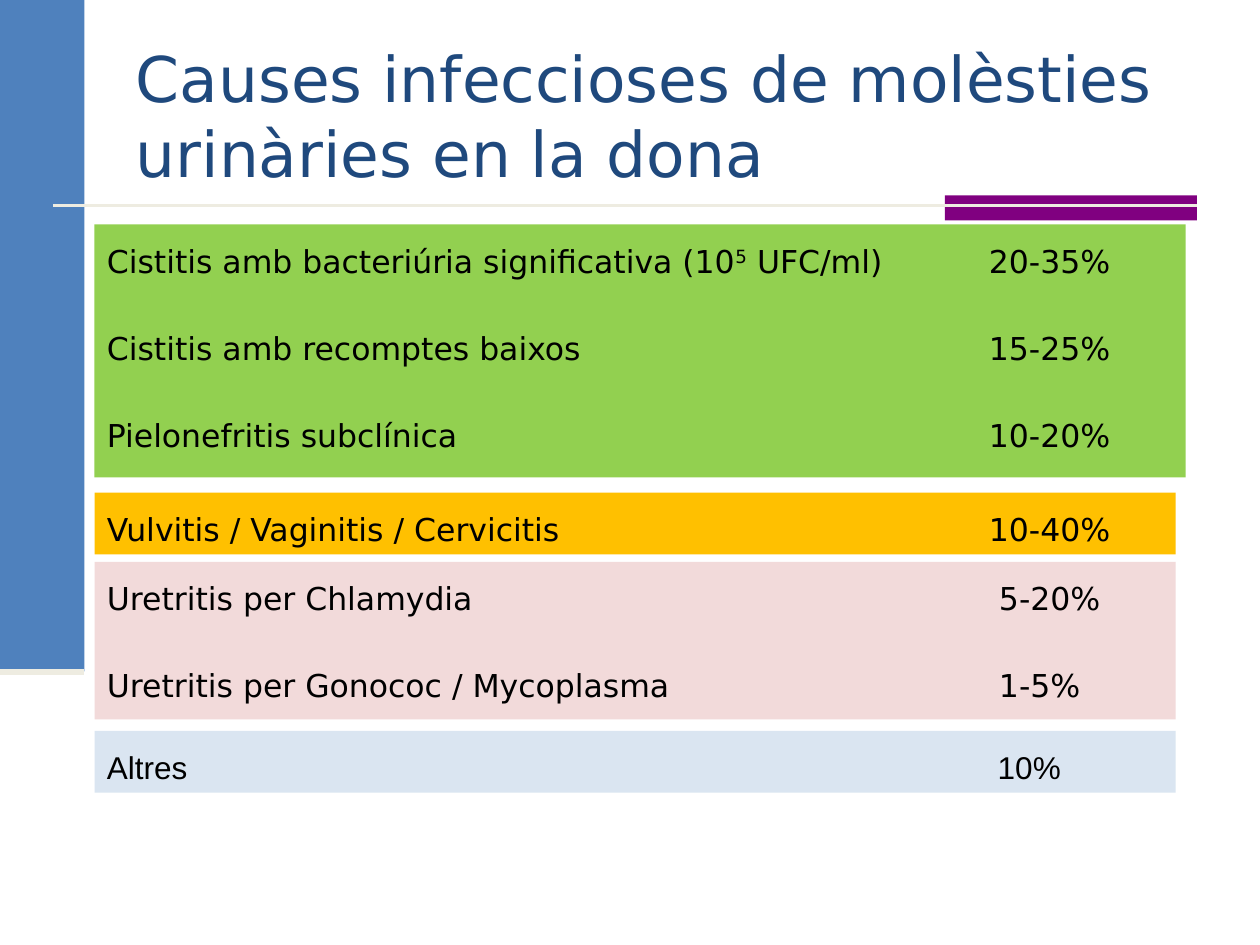
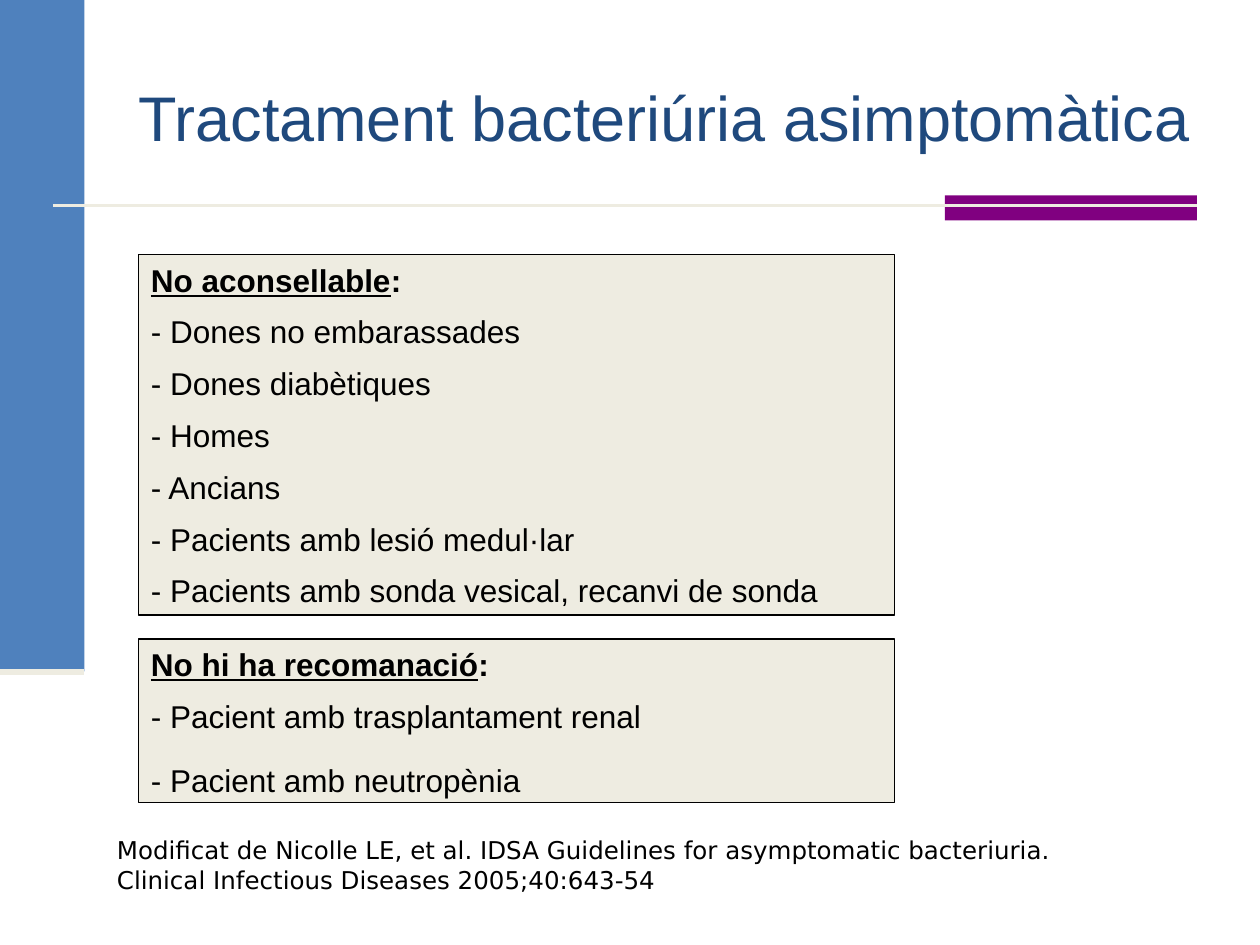
from lxml import etree
from pptx import Presentation
from pptx.dml.color import RGBColor
from pptx.enum.shapes import MSO_CONNECTOR, MSO_SHAPE
from pptx.enum.text import MSO_ANCHOR, PP_ALIGN
from pptx.oxml.ns import qn
from pptx.util import Inches, Pt

COLORS = {
    "band": "4F81BD", "accent": "800080", "rule": "EEECE1", "title": "1F497D",
    "text": "000000", "cystitis": "92D050", "vulvitis": "FFC000",
    "urethritis": "F2DADA", "others": "DAE5F1", "panel": "EEECE1",
}
SANS, ARIAL = "DejaVu Sans", "Arial"
BODY_SIZE = 18


def rgb(name):
    return RGBColor.from_string(COLORS[name])


def add_rect(slide, box, fill, outline=None):
    rect = slide.shapes.add_shape(MSO_SHAPE.RECTANGLE, *map(Inches, box))
    rect.shadow.inherit = False
    rect.fill.solid()
    rect.fill.fore_color.rgb = rgb(fill)
    if outline:
        rect.line.color.rgb = rgb(outline)
        rect.line.width = Pt(1)
    else:
        rect.line.fill.background()
    return rect


def add_rule(slide, start, end, width):
    rule = slide.shapes.add_connector(MSO_CONNECTOR.STRAIGHT, *map(Inches, start + end))
    rule.line.color.rgb = rgb("rule")
    rule.line.width = Pt(width)
    etree.SubElement(rule._element.spPr, qn("a:effectLst"))


def prepare_frame(shape, anchor=MSO_ANCHOR.TOP):
    frame = shape.text_frame
    frame.word_wrap = True
    frame.vertical_anchor = anchor
    return frame


def next_paragraph(frame, index):
    paragraph = frame.paragraphs[0] if index == 0 else frame.add_paragraph()
    paragraph.alignment = PP_ALIGN.LEFT
    return paragraph


def add_run(paragraph, text, font=ARIAL, size=BODY_SIZE, color="text", bold=False, underline=False):
    run = paragraph.add_run()
    run.text = text
    run.font.name, run.font.size = font, Pt(size)
    run.font.color.rgb = rgb(color)
    run.font.bold, run.font.underline = bold, underline
    return run


def add_tab_stop(paragraph, position):
    tabs = etree.SubElement(paragraph._p.get_or_add_pPr(), qn("a:tabLst"))
    etree.SubElement(tabs, qn("a:tab"), pos=str(Inches(position)), algn="l")


def add_text(slide, box, text, anchor=MSO_ANCHOR.TOP, **style):
    frame = prepare_frame(slide.shapes.add_textbox(*map(Inches, box)), anchor)
    add_run(next_paragraph(frame, 0), text, **style)


def add_base_slide(prs, title, title_box, font, anchor):
    """Add a slide with the side band, the title rule and the title."""
    slide = prs.slides.add_slide(prs.slide_layouts[6])
    add_rect(slide, (0, 0, 0.67, 5.33), "band")
    add_rect(slide, (7.5, 1.55, 2, 0.2), "accent")
    add_rule(slide, (0.42, 1.63), (9.5, 1.63), 1.5)
    add_rule(slide, (0, 5.33), (0.67, 5.33), 3.5)
    add_text(slide, title_box, title, anchor, font=font, size=36, color="title")
    return slide


def add_cause_group(slide, box, fill, causes, share_tab, font=SANS):
    """Add a coloured box with one cause and its share per line."""
    frame = prepare_frame(add_rect(slide, box, fill))
    for index, (cause, share) in enumerate(causes):
        paragraph = next_paragraph(frame, index)
        add_tab_stop(paragraph, share_tab)
        paragraph.line_spacing = 1.3
        if index:
            paragraph.space_before = Pt(21.6)
        before, caret, after = cause.partition("^")
        add_run(paragraph, before, font)
        if caret:
            exponent = add_run(paragraph, after[0], font)
            exponent._r.get_or_add_rPr().set("baseline", "30000")
            add_run(paragraph, after[1:], font)
        add_run(paragraph, "\t" + share, font)


def add_advice_panel(slide, box, heading, patients, last_spacing=(1, 8)):
    """Add an outlined panel; last_spacing is the last line's spacing and space before."""
    frame = prepare_frame(add_rect(slide, box, "panel", outline="text"))
    header = next_paragraph(frame, 0)
    add_run(header, heading, bold=True, underline=True)
    add_run(header, ":", bold=True)
    for index, patient in enumerate(patients, 1):
        paragraph = next_paragraph(frame, index)
        spacing, before = last_spacing if index == len(patients) else (1, 8)
        paragraph.line_spacing, paragraph.space_before = spacing, Pt(before)
        add_run(paragraph, "- " + patient)


def build_causes(prs):
    slide = add_base_slide(prs, "Causes infeccioses de molèsties urinàries en la dona",
                           (0.98, -0.58, 8.52, 2.14), SANS, MSO_ANCHOR.BOTTOM)
    left, width = 0.75, 8.58
    add_cause_group(slide, (left, 1.78, 8.66, 2.01), "cystitis", [
        ("Cistitis amb bacteriúria significativa (10^5 UFC/ml)", "20-35%"),
        ("Cistitis amb recomptes baixos", "15-25%"),
        ("Pielonefritis subclínica", "10-20%"),
    ], 7)
    add_cause_group(slide, (left, 3.91, width, 0.49), "vulvitis",
                    [("Vulvitis / Vaginitis / Cervicitis", "10-40%")], 7)
    add_cause_group(slide, (left, 4.46, width, 1.25), "urethritis", [
        ("Uretritis per Chlamydia", "5-20%"),
        ("Uretritis per Gonococ / Mycoplasma", "1-5%"),
    ], 7.08)
    add_cause_group(slide, (left, 5.8, width, 0.49), "others", [("Altres", "10%")], 7.07, ARIAL)


def build_treatment(prs):
    slide = add_base_slide(prs, "Tractament bacteriúria asimptomàtica",
                           (1, 0.3, 8.81, 1.25), ARIAL, MSO_ANCHOR.MIDDLE)
    add_advice_panel(slide, (1.1, 2.02, 6, 2.86), "No aconsellable", [
        "Dones no embarassades",
        "Dones diabètiques",
        "Homes",
        "Ancians",
        "Pacients amb lesió medul·lar",
        "Pacients amb sonda vesical, recanvi de sonda",
    ])
    add_advice_panel(slide, (1.1, 5.07, 6, 1.3), "No hi ha recomanació", [
        "Pacient amb trasplantament renal",
        "Pacient amb neutropènia",
    ], last_spacing=(1.15, 12))
    add_text(slide, (0.83, 6.58, 8.17, 0.23),
             "Modificat de Nicolle LE, et al. IDSA Guidelines for asymptomatic bacteriuria. "
             "Clinical Infectious Diseases 2005;40:643-54", font=SANS, size=14)


def main():
    prs = Presentation()
    prs.slide_width, prs.slide_height = Inches(10), Inches(7.5)
    build_causes(prs)
    build_treatment(prs)
    prs.save("out.pptx")


if __name__ == "__main__":
    main()
